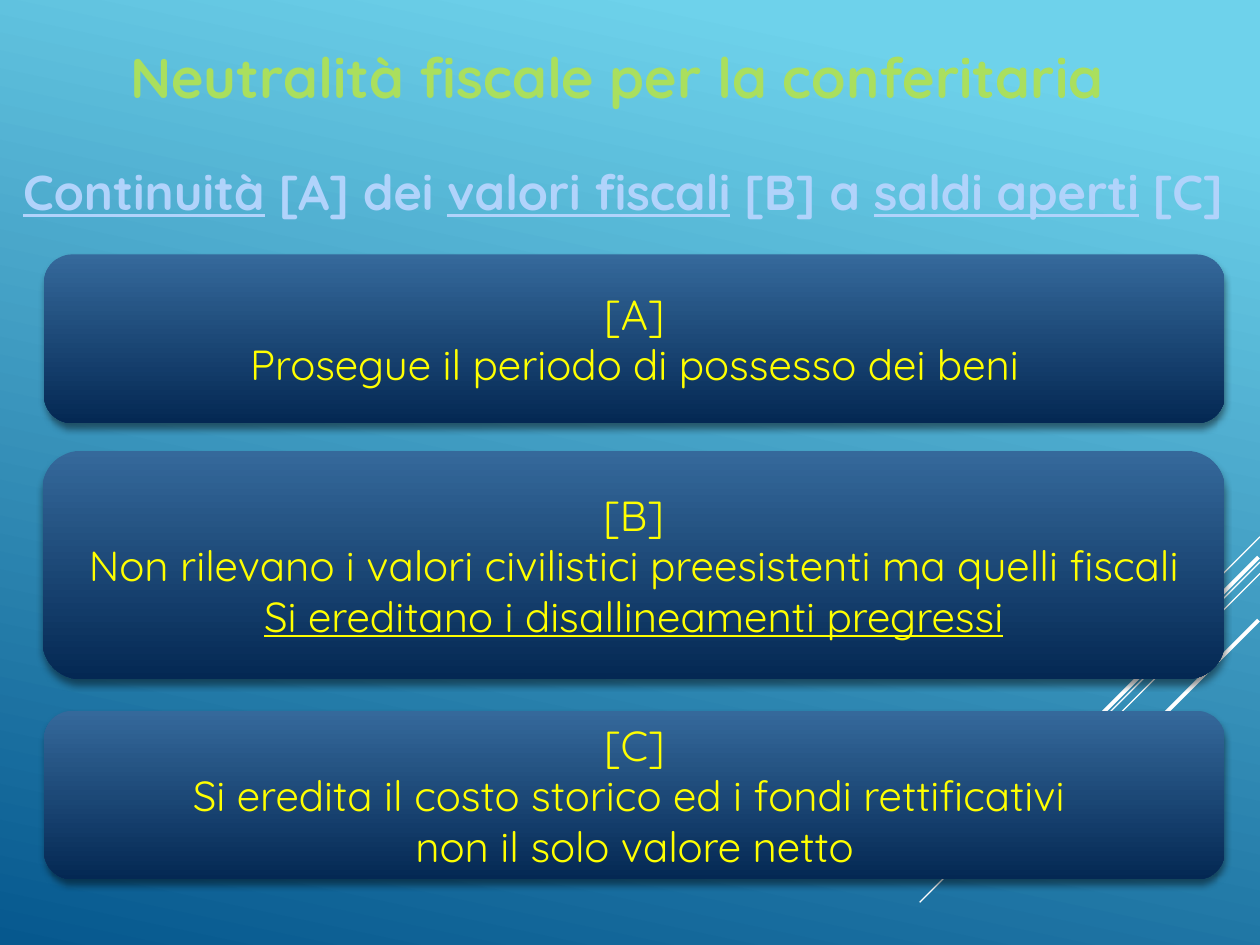
from lxml.etree import SubElement
from pptx import Presentation
from pptx.dml.color import RGBColor
from pptx.enum.shapes import MSO_CONNECTOR, MSO_SHAPE
from pptx.enum.text import MSO_ANCHOR, PP_ALIGN
from pptx.oxml.ns import qn
from pptx.util import Cm, Pt

TITLE = {"size": Pt(32), "bold": True, "color": "AADF5E"}
SUBTITLE = {"size": Pt(28), "bold": True, "color": "B1D3FB"}
BODY = {"size": Pt(24), "color": "FFFF00"}

# Right end x, y, horizontal run (cm) and width (pt) of each 45-degree line
DIAGONALS = [
    (25.4, 10.82, 2.11, 0.75),
    (25.4, 11.33, 6.86, 0.75),
    (25.4, 11.56, 4.37, 0.75),
    (25.37, 11.23, 3.99, 2.25),
    (25.37, 12.5, 2.9, 2.25),
]

# Each paragraph is a list of (text, underlined) runs
HEADING = [[("Neutralità fiscale per la conferitaria ", False)]]
PRINCIPLE = [[
    ("Continuità", True), (" [A] dei ", False),
    ("valori fiscali", True), (" [B] a ", False),
    ("saldi aperti", True), (" [C] ", False),
]]
# Left, top, width, height (cm) and paragraphs
PANELS = [
    (0.86, 9.09, 23.83, 4.6, [
        [("[B]", False)],
        [("Non rilevano i valori civilistici preesistenti ma quelli fiscali", False)],
        [("Si ereditano i disallineamenti pregressi", True)],
    ]),
    (0.89, 14.33, 23.8, 3.4, [
        [("[C]", False)],
        [("Si eredita il costo storico ed i fondi rettificativi ", False)],
        [("non il solo valore netto", False)],
    ]),
    (0.89, 5.13, 23.8, 3.4, [
        [("[A]", False)],
        [("Prosegue il periodo di possesso dei beni", False)],
    ]),
]


def rgb(value):
    return RGBColor.from_string(value)


def set_gradient(fill, stops, angle):
    """Apply (position, colour) stops; the angle runs counterclockwise."""
    fill.gradient()
    fill.gradient_angle = angle
    for stop, (position, color) in zip(fill.gradient_stops, stops):
        stop.position = position
        stop.color.rgb = rgb(color)


def write_text(shape, paragraphs, style):
    frame = shape.text_frame
    frame.word_wrap = True
    frame.vertical_anchor = MSO_ANCHOR.MIDDLE
    for index, runs in enumerate(paragraphs):
        paragraph = frame.add_paragraph() if index else frame.paragraphs[0]
        paragraph.alignment = PP_ALIGN.CENTER
        for text, underlined in runs:
            run = paragraph.add_run()
            run.text = text
            font_values = {"name": "Quicksand", "underline": underlined, **style}
            color = font_values.pop("color")
            for name, value in font_values.items():
                setattr(run.font, name, value)
            run.font.color.rgb = rgb(color)


def add_text(slide, left, top, width, height, paragraphs, style):
    box = slide.shapes.add_textbox(Cm(left), Cm(top), Cm(width), Cm(height))
    write_text(box, paragraphs, style)


def add_diagonal(slide, x, y, run, width):
    line = slide.shapes.add_connector(
        MSO_CONNECTOR.STRAIGHT, Cm(x), Cm(y), Cm(x - run), Cm(y + run))
    line.line.color.rgb = rgb("FFFFFF")
    line.line.width = Pt(width)
    SubElement(line._element.spPr, qn("a:effectLst"))


def add_drop_shadow(shape):
    shape.shadow.inherit = False
    effects = shape._element.spPr.find(qn("a:effectLst"))
    shadow = SubElement(effects, qn("a:outerShdw"), blurRad=str(Pt(4)),
                        dist=str(Pt(3)), dir="5400000", rotWithShape="0")
    color = SubElement(shadow, qn("a:srgbClr"), val="000000")
    SubElement(color, qn("a:alpha"), val="46000")


def add_panel(slide, left, top, width, height, paragraphs):
    panel = slide.shapes.add_shape(
        MSO_SHAPE.ROUNDED_RECTANGLE, Cm(left), Cm(top), Cm(width), Cm(height))
    set_gradient(panel.fill, [(0, "35699B"), (1, "042853")], 270)
    panel.line.fill.background()
    add_drop_shadow(panel)
    write_text(panel, paragraphs, BODY)


def main():
    presentation = Presentation()
    presentation.slide_width, presentation.slide_height = Cm(25.4), Cm(19.05)
    slide = presentation.slides.add_slide(presentation.slide_layouts[6])
    set_gradient(slide.background.fill, [(0.1, "6ED2EB"), (1, "06588E")], 258)
    for diagonal in DIAGONALS:
        add_diagonal(slide, *diagonal)
    add_text(slide, 0.5, 0.74, 24.2, 1.6, HEADING, TITLE)
    add_text(slide, 0, 3.12, 25.4, 1.45, PRINCIPLE, SUBTITLE)
    for panel in PANELS:
        add_panel(slide, *panel)
    presentation.save("out.pptx")


if __name__ == "__main__":
    main()
